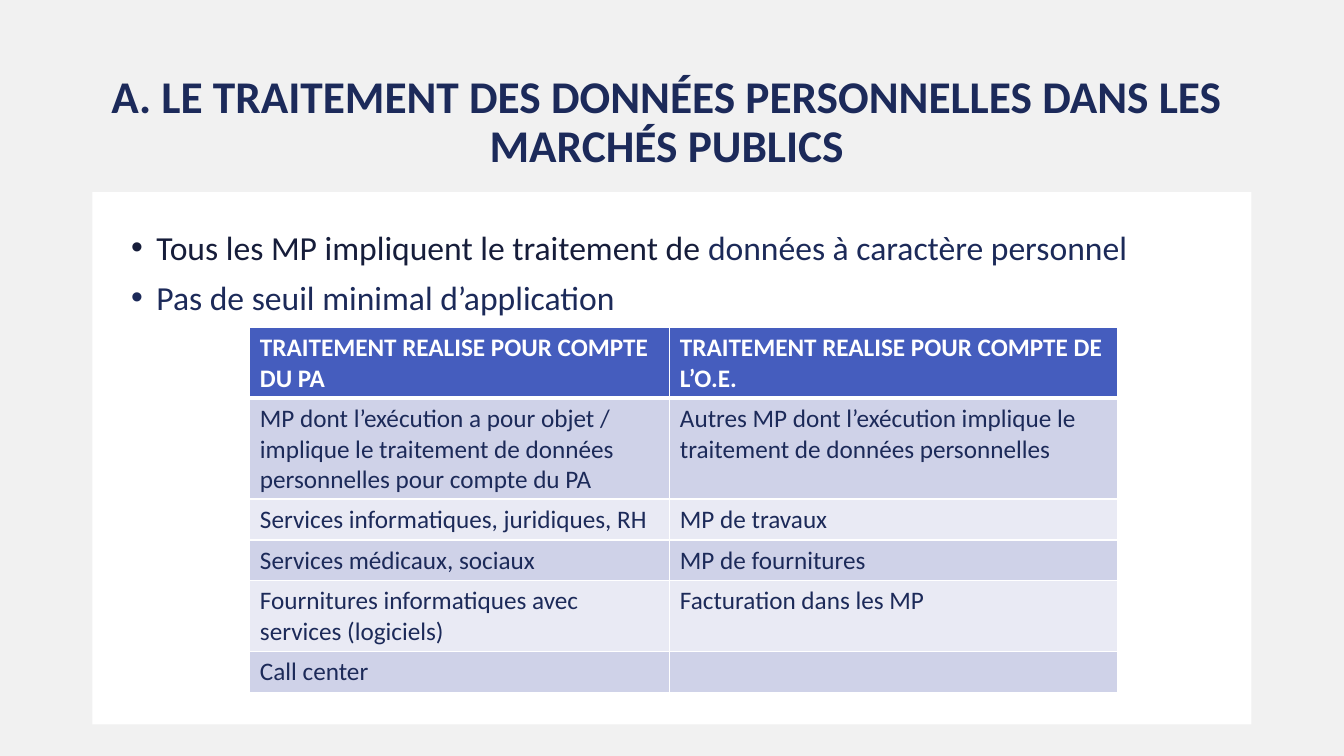
from dataclasses import dataclass

from lxml import etree
from pptx import Presentation
from pptx import util as u
from pptx.dml.color import RGBColor
from pptx.enum import shapes, text
from pptx.oxml import ns

PX = 9525  # EMU per px, 96 px to the inch
FONT = "Calibri"
COLOURS = {
    "page": "F1F1F1",
    "white": "FFFFFF",
    "title": "1C2A5A",
    "ink": "161D3A",
    "navy": "1C2A59",
    "header": "455DBE",
    "band": "CFD2E8",
    "light": "E9EAF4",
}


@dataclass(frozen=True)
class Box:
    left: int
    top: int
    width: int
    height: int

    def emu(self) -> tuple[int, ...]:
        return tuple(v * PX for v in (self.left, self.top, self.width, self.height))


@dataclass(frozen=True)
class Span:
    words: str
    colour: str


TITLE_BOX = Box(88, 88, 1104, 95)
BODY_BOX = Box(88, 183, 1104, 507)
TABLE_BOX = Box(238, 312, 826, 234)
COLUMN_WIDTHS = (400, 426)

TITLE = "A. LE TRAITEMENT DES DONNÉES PERSONNELLES DANS LES MARCHÉS PUBLICS"
BULLETS = (
    (
        Span("Tous les MP impliquent le traitement de ", "ink"),
        Span("données à caractère personnel", "navy"),
    ),
    (Span("Pas de seuil minimal d’application", "navy"),),
)
ROWS = (
    ("TRAITEMENT REALISE POUR COMPTE DU PA", "TRAITEMENT REALISE POUR COMPTE DE L’O.E."),
    (
        "MP dont l’exécution a pour objet / implique le traitement de données "
        "personnelles pour compte du PA",
        "Autres MP dont l’exécution implique le traitement de données personnelles",
    ),
    ("Services informatiques, juridiques, RH", "MP de travaux"),
    ("Services médicaux, sociaux", "MP de fournitures"),
    ("Fournitures informatiques avec services (logiciels)", "Facturation dans les MP"),
    ("Call center", ""),
)


def rgb(colour: str) -> RGBColor:
    return RGBColor.from_string(COLOURS[colour])


def paint(fill, colour: str) -> None:
    fill.solid()
    fill.fore_color.rgb = rgb(colour)


def add_text(para, words: str, *, size: float, colour: str, bold: bool = False) -> None:
    span = para.add_run()
    span.text = words
    span.font.name = FONT
    span.font.size = u.Pt(size)
    span.font.bold = bold
    span.font.color.rgb = rgb(colour)


def set_frame(frame, anchor, left: int, top: int, right: int, bottom: int) -> None:
    frame.word_wrap = True
    frame.vertical_anchor = anchor
    frame.margin_left, frame.margin_top = left * PX, top * PX
    frame.margin_right, frame.margin_bottom = right * PX, bottom * PX


def add_bullet(para) -> None:
    props = para._p.get_or_add_pPr()
    props.set("marL", str(24 * PX))
    props.set("indent", str(-24 * PX))
    etree.SubElement(props, ns.qn("a:buFont"), typeface="Arial")
    etree.SubElement(props, ns.qn("a:buChar"), char="•")


def add_borders(cell, top: int, bottom: int) -> None:
    props = cell._tc.get_or_add_tcPr()
    for side, points in (("L", 1), ("R", 1), ("T", top), ("B", bottom)):
        line = etree.SubElement(props, ns.qn(f"a:ln{side}"), w=str(u.Pt(points)))
        fill = etree.SubElement(line, ns.qn("a:solidFill"))
        etree.SubElement(fill, ns.qn("a:srgbClr"), val=COLOURS["white"])


def add_title(page) -> None:
    frame = page.shapes.add_textbox(*TITLE_BOX.emu()).text_frame
    set_frame(frame, text.MSO_ANCHOR.BOTTOM, 0, 5, 10, 19)
    para = frame.paragraphs[0]
    para.alignment = text.PP_ALIGN.CENTER
    para.line_spacing = 0.9
    add_text(para, TITLE, size=32.4, colour="title", bold=True)


def add_body(page) -> None:
    panel = page.shapes.add_shape(shapes.MSO_SHAPE.RECTANGLE, *BODY_BOX.emu())
    panel.shadow.inherit = False
    paint(panel.fill, "white")
    panel.line.fill.background()
    frame = panel.text_frame
    set_frame(frame, text.MSO_ANCHOR.TOP, 37, 37, 37, 37)
    for index, spans in enumerate(BULLETS):
        para = frame.add_paragraph() if index else frame.paragraphs[0]
        add_bullet(para)
        para.alignment = text.PP_ALIGN.LEFT
        para.line_spacing = 0.9
        para.space_before = u.Pt(10 if index else 0)
        for span in spans:
            add_text(para, span.words, size=24, colour=span.colour)


def add_comparison(page) -> None:
    table = page.shapes.add_table(len(ROWS), len(COLUMN_WIDTHS), *TABLE_BOX.emu()).table
    for column, width in zip(table.columns, COLUMN_WIDTHS):
        column.width = width * PX
    for r, row in enumerate(ROWS):
        header = r == 0
        fill = "header" if header else "band" if r % 2 else "light"
        for c, words in enumerate(row):
            cell = table.cell(r, c)
            # The rule under the header is thicker than the others
            add_borders(cell, top=3 if r == 1 else 1, bottom=3 if header else 1)
            paint(cell.fill, fill)
            if words:
                add_text(
                    cell.text_frame.paragraphs[0],
                    words,
                    size=18,
                    colour="white" if header else "navy",
                    bold=header,
                )


def main() -> None:
    deck = Presentation()
    deck.slide_width, deck.slide_height = 1280 * PX, 720 * PX
    page = deck.slides.add_slide(deck.slide_layouts[6])
    paint(page.background.fill, "page")
    add_title(page)
    add_body(page)
    add_comparison(page)
    deck.save("out.pptx")


if __name__ == "__main__":
    main()
